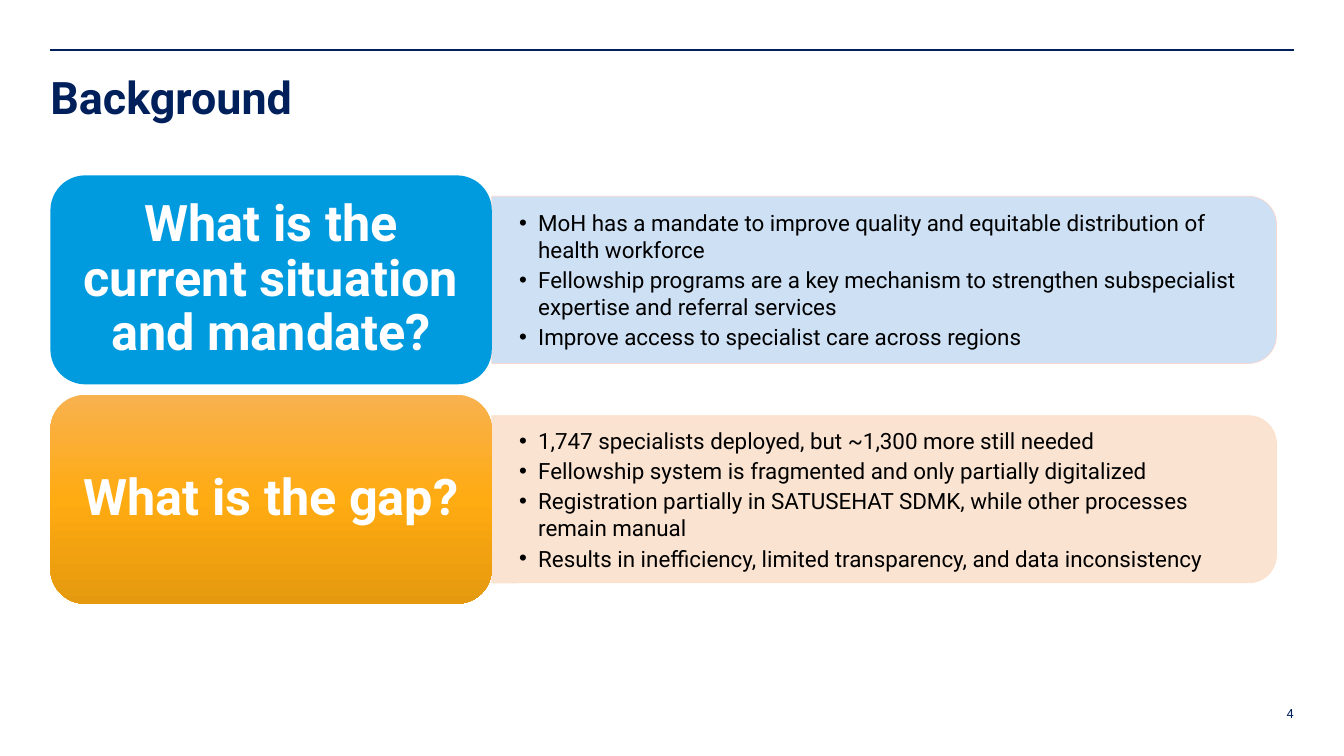
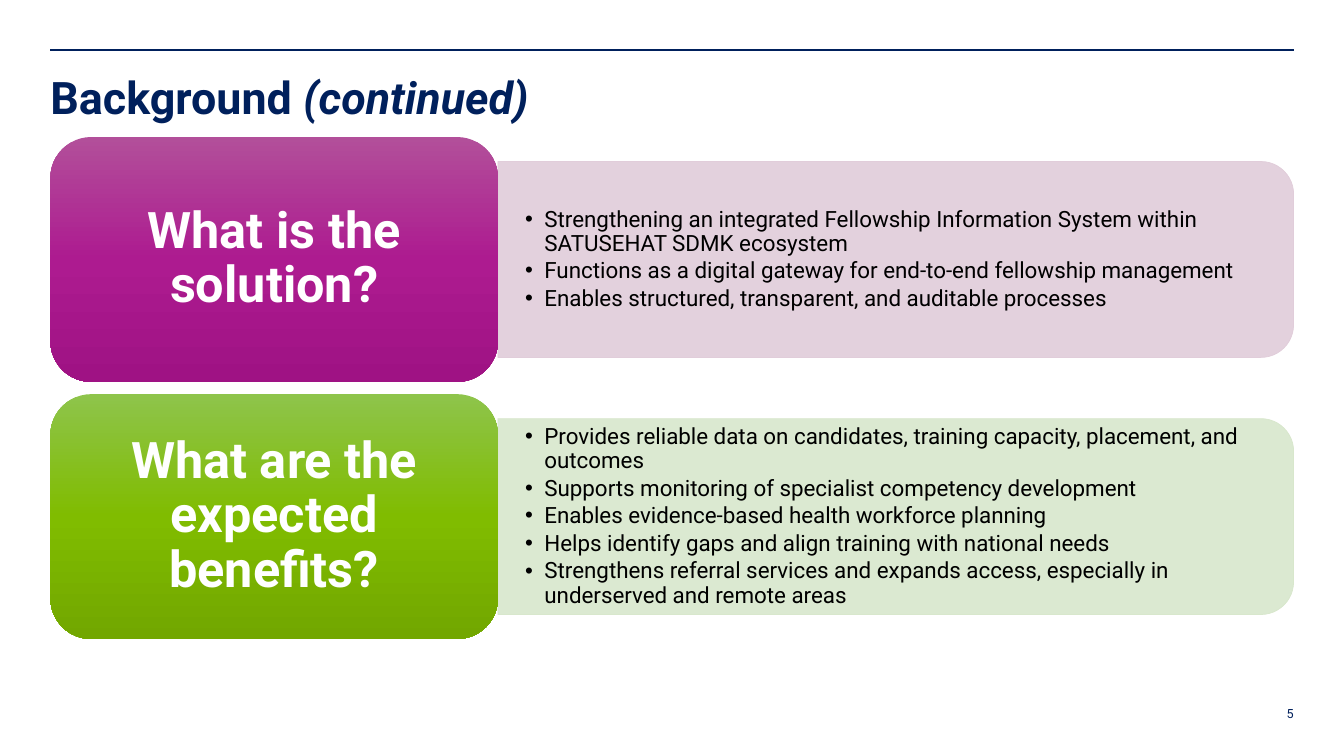
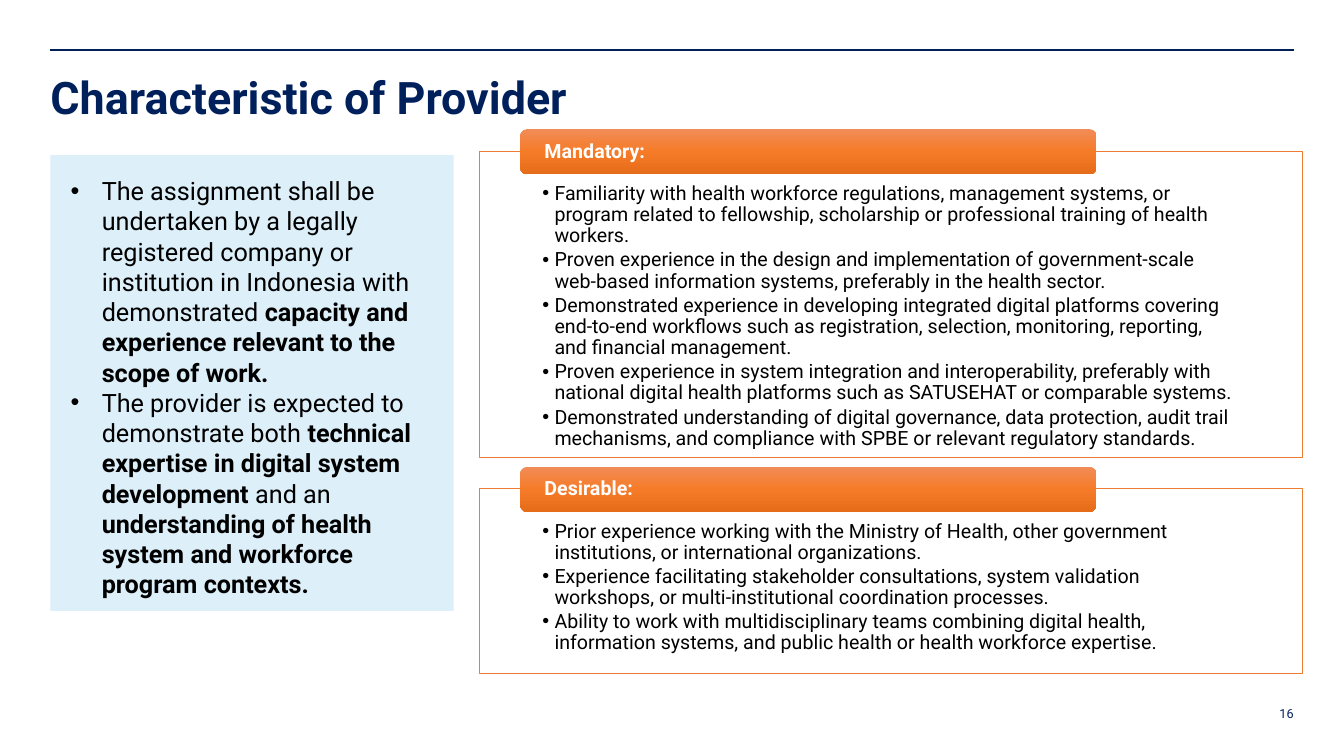
import pptx
import pptx.util
import pptx.dml.color
import pptx.enum.shapes
import pptx.enum.text
import pptx.oxml
import pptx.oxml.ns
from lxml import etree

Inches = pptx.util.Inches
Pt = pptx.util.Pt
RGBColor = pptx.dml.color.RGBColor
SHAPE = pptx.enum.shapes.MSO_SHAPE
ALIGN = pptx.enum.text.PP_ALIGN
ANCHOR = pptx.enum.text.MSO_ANCHOR
qn = pptx.oxml.ns.qn

FONT = "Roboto"
NAVY = RGBColor(0x00, 0x20, 0x5C)
BLACK = RGBColor(0x00, 0x00, 0x00)
WHITE = RGBColor(0xFF, 0xFF, 0xFF)
BLUE = RGBColor(0x00, 0x9A, 0xDE)
PALE_BLUE = RGBColor(0xC9, 0xDD, 0xF3)
PALE_PEACH = RGBColor(0xFB, 0xE1, 0xCD)
PALE_ROSE = RGBColor(0xF8, 0xD7, 0xCE)
PALE_MAUVE = RGBColor(0xE1, 0xCD, 0xDA)
PALE_GREEN = RGBColor(0xD8, 0xE7, 0xCC)
PALE_SKY = RGBColor(0xDD, 0xEF, 0xF9)
ORANGE = RGBColor(0xED, 0x7D, 0x31)
AMBER_SHADES = (RGBColor(0xF8, 0xB1, 0x4F), RGBColor(0xFF, 0xAB, 0x12), RGBColor(0xE5, 0x99, 0x0E))
PURPLE_SHADES = (RGBColor(0xB2, 0x4F, 0x9A), RGBColor(0xAD, 0x1B, 0x90), RGBColor(0x9F, 0x12, 0x84))
GREEN_SHADES = (RGBColor(0x8E, 0xC4, 0x4B), RGBColor(0x80, 0xBC, 0x00), RGBColor(0x72, 0xA7, 0x00))
ORANGE_SHADES = (RGBColor(0xF1, 0x8C, 0x57), RGBColor(0xF6, 0x7B, 0x28), RGBColor(0xE5, 0x6C, 0x19))

LEFT, RIGHT = 0.5, 12.83


def make_translucent(properties):
    """Show every solid colour under the element at 90 % opacity."""
    for color in properties.iter(qn("a:srgbClr")):
        etree.SubElement(color, qn("a:alpha")).set("val", "90000")


def shade(shape, colors):
    """Fill with colours spread evenly from top to bottom."""
    shape.fill.gradient()
    shape.fill.gradient_angle = 270
    stops = shape._element.spPr.find(qn("a:gradFill")).find(qn("a:gsLst"))
    for stop in list(stops):
        stops.remove(stop)
    for i, color in enumerate(colors):
        stop = etree.SubElement(stops, qn("a:gs"))
        stop.set("pos", str(100000 * i // (len(colors) - 1)))
        etree.SubElement(stop, qn("a:srgbClr")).set("val", str(color))


def add_box(slide, kind, left, top, width, height, fill, line=None, translucent=False):
    box = slide.shapes.add_shape(kind, Inches(left), Inches(top), Inches(width), Inches(height))
    box.shadow.inherit = False
    if isinstance(fill, RGBColor):
        box.fill.solid()
        box.fill.fore_color.rgb = fill
    else:
        shade(box, fill)
    if translucent:
        make_translucent(box._element.spPr)
    if line is None:
        box.line.fill.background()
    else:
        box.line.color.rgb = line
        box.line.width = Pt(0.5)
    return box


def add_text_area(slide, left, top, width, height):
    return slide.shapes.add_textbox(Inches(left), Inches(top), Inches(width), Inches(height))


def add_bullet(paragraph, indent):
    properties = paragraph._p.get_or_add_pPr()
    properties.set("marL", str(Inches(indent)))
    properties.set("indent", str(-Inches(indent)))
    etree.SubElement(properties, qn("a:buFont")).set("typeface", "Arial")
    etree.SubElement(properties, qn("a:buChar")).set("char", "•")


def write(area, paragraphs, size, color, insets=(0, 0), bold=False, align=ALIGN.LEFT,
          anchor=ANCHOR.TOP, indent=None, spacing=1.0, after=0):
    """Write paragraphs, each a string or a list of (text, emphasis) with emphasis "", "b" or "i"."""
    frame = area.text_frame
    frame.word_wrap = True
    frame.vertical_anchor = anchor
    frame.margin_left = frame.margin_right = Inches(insets[0])
    frame.margin_top = frame.margin_bottom = Inches(insets[1])
    for i, parts in enumerate(paragraphs):
        paragraph = frame.add_paragraph() if i else frame.paragraphs[0]
        if indent:
            add_bullet(paragraph, indent)
        paragraph.alignment = align
        paragraph.line_spacing = spacing
        paragraph.space_after = Pt(after)
        for text, emphasis in [(parts, "")] if isinstance(parts, str) else parts:
            run = paragraph.add_run()
            run.text = text
            run.font.name = FONT
            run.font.size = Pt(size)
            run.font.color.rgb = color
            run.font.bold = bold or emphasis == "b"
            run.font.italic = emphasis == "i"


def start_slide(deck, title, number):
    """Add a slide with the shared rule, title and page number."""
    slide = deck.slides.add_slide(deck.slide_layouts[6])
    rule = slide.shapes.add_connector(pptx.enum.shapes.MSO_CONNECTOR.STRAIGHT,
                                      Inches(LEFT), Inches(0.5), Inches(RIGHT), Inches(0.5))
    rule.line.color.rgb = NAVY
    rule.line.width = Pt(1.5)
    etree.SubElement(rule._element.spPr, qn("a:effectLst"))
    write(add_text_area(slide, LEFT, 0.75, RIGHT - LEFT, 1.1), [title], 32, NAVY,
          bold=True, spacing=0.9)
    write(add_text_area(slide, RIGHT - 0.42, 7, 0.42, 0.35), [str(number)], 9, NAVY,
          align=ALIGN.RIGHT)
    return slide


def add_question_row(slide, left, top, width, height, question, fill, answers,
                     answer_fill, answer_line, spacing):
    question_width = 0.36 * width
    answer_left, answer_width = left + question_width, width - question_width
    answer_height = 0.8 * height
    middle = top + height / 2
    # The panel is a tall shape turned a quarter, so that its right corners are round.
    panel = add_box(slide, SHAPE.ROUND_2_SAME_RECTANGLE,
                    answer_left + (answer_width - answer_height) / 2, middle - answer_width / 2,
                    answer_height, answer_width, answer_fill, answer_line, translucent=True)
    panel.rotation = 90
    margin = 0.05 * answer_height
    write(add_text_area(slide, answer_left, middle - answer_height / 2 + margin,
                        answer_width - margin, answer_height - 2 * margin),
          answers, 16, BLACK, (0.27, 0.14), anchor=ANCHOR.MIDDLE, indent=0.19,
          spacing=spacing, after=2.4)
    write(add_box(slide, SHAPE.ROUNDED_RECTANGLE, left, top, question_width, height, fill),
          [question], 36, WHITE, (0.15, 0.07), bold=True, align=ALIGN.CENTER,
          anchor=ANCHOR.MIDDLE, spacing=0.9)


def add_question_rows(slide, left, top, width, height, rows, spacing):
    """Stack the rows in the box, with gaps of a twentieth of a row."""
    row_height = height / (len(rows) + 0.05 * (len(rows) - 1))
    for i, row in enumerate(rows):
        add_question_row(slide, left, top + i * 1.05 * row_height, width, row_height, *row, spacing)


def add_requirements(slide, left, top, width, height, heading, requirements):
    write(add_box(slide, SHAPE.RECTANGLE, left, top, width, height, WHITE, ORANGE, translucent=True),
          requirements, 14, BLACK, (0.63, 0.32), indent=0.12, spacing=0.9, after=2.1)
    write(add_box(slide, SHAPE.ROUNDED_RECTANGLE, left + 0.05 * width, top - 0.22,
                  0.7 * width, 0.45, ORANGE_SHADES),
          [heading], 14, WHITE, (0.22, 0), bold=True, anchor=ANCHOR.MIDDLE, spacing=0.9)


def build_background(deck):
    slide = start_slide(deck, "Background", 4)
    add_question_rows(slide, LEFT, 1.74, 12.16, 4.25, [
        ("What is the current situation and mandate?", BLUE, [
            "MoH has a mandate to improve quality and equitable distribution of health workforce",
            "Fellowship programs are a key mechanism to strengthen subspecialist expertise and "
            "referral services",
            "Improve access to specialist care across regions",
        ], PALE_BLUE, PALE_ROSE),
        ("What is the gap?", AMBER_SHADES, [
            "1,747 specialists deployed, but ~1,300 more still needed",
            "Fellowship system is fragmented and only partially digitalized",
            "Registration partially in SATUSEHAT SDMK, while other processes remain manual",
            "Results in inefficiency, limited transparency, and data inconsistency",
        ], PALE_PEACH, PALE_PEACH),
    ], spacing=1.0)


def build_background_continued(deck):
    slide = start_slide(deck, [("Background ", ""), ("(continued)", "i")], 5)
    add_question_rows(slide, LEFT, 1.36, RIGHT - LEFT, 4.98, [
        ("What is the solution?", PURPLE_SHADES, [
            "Strengthening an integrated Fellowship Information System within SATUSEHAT SDMK ecosystem",
            "Functions as a digital gateway for end-to-end fellowship management",
            "Enables structured, transparent, and auditable processes",
        ], PALE_MAUVE, PALE_MAUVE),
        ("What are the expected benefits?", GREEN_SHADES, [
            "Provides reliable data on candidates, training capacity, placement, and outcomes",
            "Supports monitoring of specialist competency development",
            "Enables evidence-based health workforce planning",
            "Helps identify gaps and align training with national needs",
            "Strengthens referral services and expands access, especially in underserved "
            "and remote areas",
        ], PALE_GREEN, PALE_GREEN),
    ], spacing=0.9)


def build_provider(deck):
    slide = start_slide(deck, "Characteristic of Provider", 16)
    write(add_box(slide, SHAPE.RECTANGLE, LEFT, 1.54, 4, 4.52, PALE_SKY), [
        [("The assignment shall be undertaken by a legally registered company or institution "
          "in Indonesia with demonstrated ", ""),
         ("capacity and experience relevant to the scope of work.", "b")],
        [("The provider is expected to demonstrate both ", ""),
         ("technical expertise in digital system development ", "b"),
         ("and an ", ""),
         ("understanding of health system and workforce program contexts.", "b")],
    ], 18, BLACK, (0.2, 0.2), indent=0.31)
    add_requirements(slide, 4.75, 1.5, 8.17, 3.04, "Mandatory:", [
        "Familiarity with health workforce regulations, management systems, or program related to "
        "fellowship, scholarship or professional training of health workers.",
        "Proven experience in the design and implementation of government-scale web-based "
        "information systems, preferably in the health sector.",
        "Demonstrated experience in developing integrated digital platforms covering end-to-end "
        "workflows such as registration, selection, monitoring, reporting, and financial management.",
        "Proven experience in system integration and interoperability, preferably with national "
        "digital health platforms such as SATUSEHAT or comparable systems.",
        "Demonstrated understanding of digital governance, data protection, audit trail mechanisms, "
        "and compliance with SPBE or relevant regulatory standards.",
    ])
    add_requirements(slide, 4.75, 4.85, 8.17, 1.83, "Desirable:", [
        "Prior experience working with the Ministry of Health, other government institutions, or "
        "international organizations.",
        "Experience facilitating stakeholder consultations, system validation workshops, or "
        "multi-institutional coordination processes.",
        "Ability to work with multidisciplinary teams combining digital health, information systems, "
        "and public health or health workforce expertise.",
    ])


def main():
    deck = pptx.Presentation()
    deck.slide_width, deck.slide_height = Inches(13.33), Inches(7.5)
    build_background(deck)
    build_background_continued(deck)
    build_provider(deck)
    deck.save("out.pptx")


if __name__ == "__main__":
    main()
